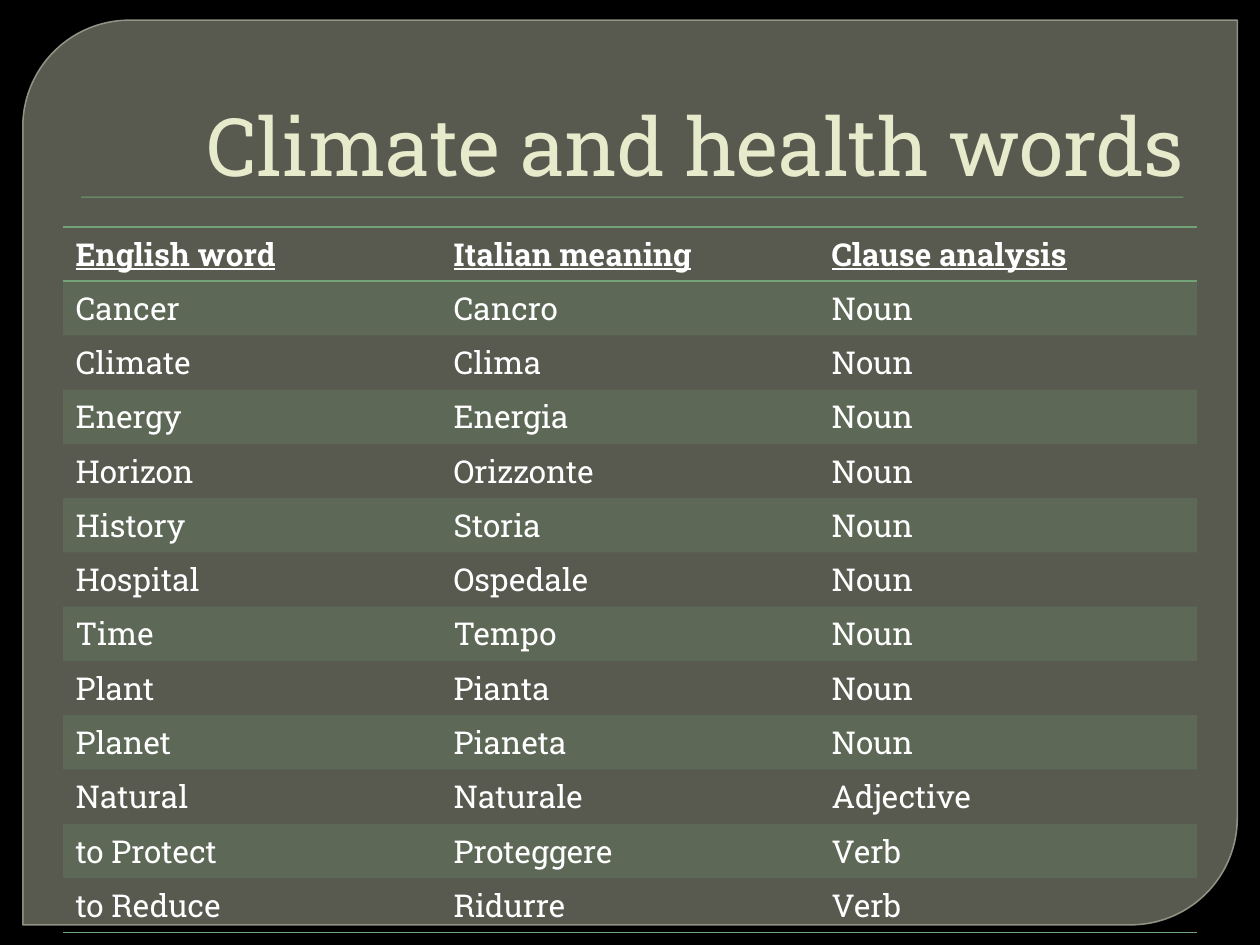
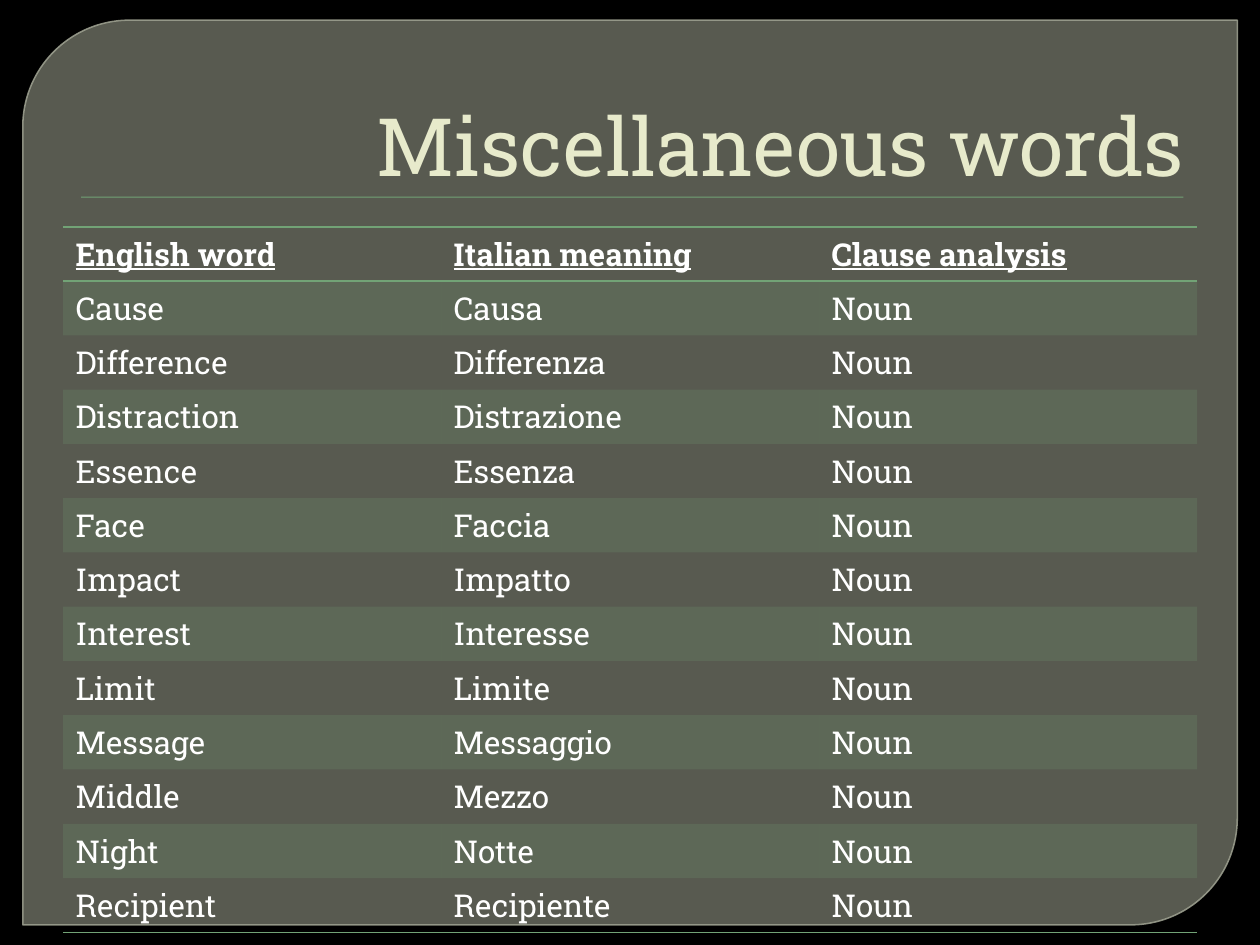
from lxml.etree import SubElement
from pptx import Presentation
from pptx.dml.color import RGBColor
from pptx.enum.shapes import MSO_SHAPE
from pptx.enum.text import MSO_ANCHOR, MSO_AUTO_SIZE, PP_ALIGN
from pptx.oxml.ns import qn
from pptx.util import Pt

BLACK = RGBColor(0x00, 0x00, 0x00)
WHITE = RGBColor(0xFF, 0xFF, 0xFF)
OLIVE = RGBColor(0x88, 0x8B, 0x7B)
OUTLINE = RGBColor(0x9D, 0xA0, 0x90)
GREEN = RGBColor(0x72, 0xA3, 0x76)
CREAM = RGBColor(0xE7, 0xEA, 0xCB)
FONT = "Roboto Slab"
NO_TABLE_STYLE = "{2D5ABB26-0587-4C30-8999-92F81FD0307C}"

# Boxes as left, top, width, height in points
PANEL_BOX = (13, 11.5, 694, 517)
RULE_BOX = (46.3, 112.3, 630, 0.7)
TITLE_BOX = (36, 20, 648, 90)
TABLE_BOX = (36, 129.6, 648, 379.6)

HEADINGS = ("English word", "Italian meaning", "Clause analysis")
VOCABULARY = {
    "Climate and health words": [
        ("Cancer", "Cancro", "Noun"),
        ("Climate", "Clima", "Noun"),
        ("Energy", "Energia", "Noun"),
        ("Horizon", "Orizzonte", "Noun"),
        ("History", "Storia", "Noun"),
        ("Hospital", "Ospedale", "Noun"),
        ("Time", "Tempo", "Noun"),
        ("Plant", "Pianta", "Noun"),
        ("Planet", "Pianeta", "Noun"),
        ("Natural", "Naturale", "Adjective"),
        ("to Protect", "Proteggere", "Verb"),
        ("to Reduce", "Ridurre", "Verb"),
    ],
    "Miscellaneous words": [
        ("Cause", "Causa", "Noun"),
        ("Difference", "Differenza", "Noun"),
        ("Distraction", "Distrazione", "Noun"),
        ("Essence", "Essenza", "Noun"),
        ("Face", "Faccia", "Noun"),
        ("Impact", "Impatto", "Noun"),
        ("Interest", "Interesse", "Noun"),
        ("Limit", "Limite", "Noun"),
        ("Message", "Messaggio", "Noun"),
        ("Middle", "Mezzo", "Noun"),
        ("Night", "Notte", "Noun"),
        ("Recipient", "Recipiente", "Noun"),
    ],
}


def in_points(box):
    return [Pt(length) for length in box]


def write(frame, text, size=18, color=WHITE, bold=False, underline=False, align=PP_ALIGN.LEFT):
    paragraph = frame.paragraphs[0]
    paragraph.alignment = align
    run = paragraph.add_run()
    run.text = text
    run.font.name = FONT
    run.font.size = Pt(size)
    run.font.color.rgb = color
    run.font.bold = bold
    run.font.underline = underline


def set_opacity(paint, percent):
    """Make a solid fill partly transparent."""
    color = paint._xPr.find(qn("a:solidFill"))[0]
    SubElement(color, qn("a:alpha"), val=str(percent * 1000))


def add_block(shapes, preset, box, color):
    block = shapes.add_shape(preset, *in_points(box))
    block.shadow.inherit = False
    block.fill.solid()
    block.fill.fore_color.rgb = color
    return block


def add_panel(shapes, box):
    panel = add_block(shapes, MSO_SHAPE.ROUND_2_DIAG_RECTANGLE, box, OLIVE)
    panel.adjustments[0] = 0.118
    panel.adjustments[1] = 0
    set_opacity(panel.fill, 65)
    panel.line.color.rgb = OUTLINE
    panel.line.width = Pt(0.87)
    set_opacity(panel.line.fill, 88)
    return panel


def add_title_rule(shapes, box):
    rule = add_block(shapes, MSO_SHAPE.RECTANGLE, box, GREEN)
    rule.line.fill.background()
    effects = rule._element.spPr.find(qn("a:effectLst"))
    shadow = SubElement(effects, qn("a:outerShdw"), blurRad=str(Pt(1)), dist=str(Pt(1)), dir="5400000")
    tint = SubElement(shadow, qn("a:srgbClr"), val=str(BLACK))
    SubElement(tint, qn("a:alpha"), val="75000")
    return rule


def decorate_layout(layout, slide):
    """Give the layout its backdrop, drawn on a slide and moved behind the layout's title."""
    layout.background.fill.solid()
    layout.background.fill.fore_color.rgb = BLACK
    for placeholder in list(layout.placeholders)[1:]:
        layout.placeholders.element.remove(placeholder.element)
    backdrop = add_panel(slide.shapes, PANEL_BOX), add_title_rule(slide.shapes, RULE_BOX)
    for position, part in enumerate(backdrop, start=2):
        layout.shapes.element.insert(position, part.element)


def place_title(title, text, box):
    title.left, title.top, title.width, title.height = in_points(box)
    frame = title.text_frame
    frame.word_wrap = True
    frame.auto_size = MSO_AUTO_SIZE.NONE
    frame.vertical_anchor = MSO_ANCHOR.BOTTOM
    frame.margin_bottom = 0
    write(frame, text, size=46, color=CREAM, align=PP_ALIGN.RIGHT)


def add_border(cell, side, position):
    properties = cell._tc.get_or_add_tcPr()
    border = SubElement(properties, qn(f"a:{side}"), w=str(Pt(1)))
    fill = SubElement(border, qn("a:solidFill"))
    SubElement(fill, qn("a:srgbClr"), val=str(GREEN))
    properties.insert(position, border)


def add_word_table(shapes, words, box):
    rows = [HEADINGS, *words]
    table = shapes.add_table(len(rows), len(HEADINGS), *in_points(box)).table
    table._tbl.tblPr.find(qn("a:tableStyleId")).text = NO_TABLE_STYLE
    for r, row in enumerate(rows):
        heading = r == 0
        table.rows[r].height = Pt(box[3] / len(rows))
        for c, word in enumerate(row):
            cell = table.cell(r, c)
            write(cell.text_frame, word, bold=heading, underline=heading)
            # Every other row is tinted
            if r % 2:
                cell.fill.solid()
                cell.fill.fore_color.rgb = GREEN
                set_opacity(cell.fill, 20)
            else:
                cell.fill.background()
            # Lines around the headings and below the last row
            if heading or r == len(rows) - 1:
                add_border(cell, "lnB", 0)
            if heading:
                add_border(cell, "lnT", 0)


def main():
    deck = Presentation()
    deck.slide_width, deck.slide_height = Pt(720), Pt(540)
    layout = deck.slide_layouts.get_by_name("Title Only")
    for number, (heading, words) in enumerate(VOCABULARY.items()):
        slide = deck.slides.add_slide(layout)
        if number == 0:
            decorate_layout(layout, slide)
        place_title(slide.shapes.title, heading, TITLE_BOX)
        add_word_table(slide.shapes, words, TABLE_BOX)
    deck.save("out.pptx")


if __name__ == "__main__":
    main()
